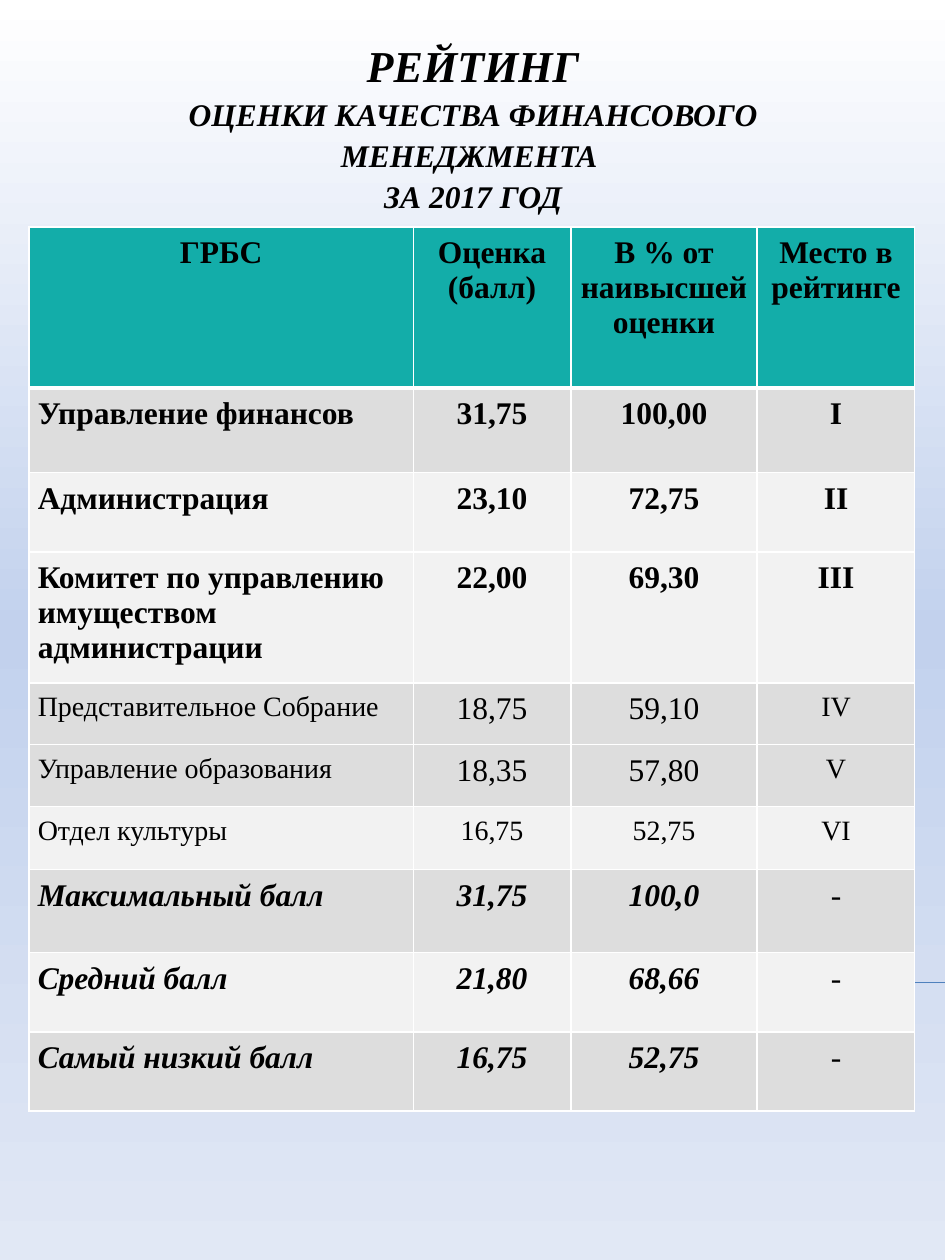
from lxml import etree
from pptx import Presentation
from pptx.dml.color import RGBColor
from pptx.enum.shapes import MSO_CONNECTOR
from pptx.enum.text import MSO_ANCHOR, PP_ALIGN
from pptx.oxml.ns import qn
from pptx.util import Inches, Pt

STRAIGHT = MSO_CONNECTOR.STRAIGHT
TOP = MSO_ANCHOR.TOP
LEFT, CENTER = PP_ALIGN.LEFT, PP_ALIGN.CENTER
FONT = "Times New Roman"
COLORS = {
    "text": "000000", "header": "13ADA9", "dark": "DDDDDD", "light": "F2F2F2",
    "border": "FFFFFF", "rule": "4F81BD",
    "sky": "FFFFFF", "middle": "C2D1ED", "ground": "E1E8F5",
}


def style(run, size, bold, italic):
    font = run.font
    font.name, font.size, font.bold, font.italic = FONT, Pt(size), bold, italic
    font.color.rgb = RGBColor.from_string(COLORS["text"])


def add_border(cell_properties, side, width):
    line = etree.SubElement(cell_properties, qn(f"a:{side}"), w=str(Pt(width)))
    fill = etree.SubElement(line, qn("a:solidFill"))
    etree.SubElement(fill, qn("a:srgbClr"), val=COLORS["border"])


prs = Presentation()
prs.slide_width, prs.slide_height = Inches(7.5), Inches(10)
W, H = prs.slide_width, prs.slide_height
slide = prs.slides.add_slide(prs.slide_layouts[6])

background = slide.background.fill
background.gradient()
background.gradient_angle = 270
stops = background._fill._gradFill.find(qn("a:gsLst"))
for stop in list(stops):
    stops.remove(stop)
for position, shade in ((0, "sky"), (50, "middle"), (100, "ground")):
    stop = etree.SubElement(stops, qn("a:gs"), pos=str(position * 1000))
    etree.SubElement(stop, qn("a:srgbClr"), val=COLORS[shade])

rule = slide.shapes.add_connector(STRAIGHT, int(W * 0.056), int(H * 0.78), W, int(H * 0.78))
rule.line.color.rgb = RGBColor.from_string(COLORS["rule"])
rule.line.width = Pt(0.75)
etree.SubElement(rule._element.spPr, qn("a:effectLst"))

heading = slide.shapes.add_textbox(Inches(0.35), Inches(0.21), Inches(6.81), Inches(1.56)).text_frame
heading.word_wrap = True
heading.vertical_anchor = TOP
heading.margin_left = heading.margin_right = Inches(0.15)
heading.margin_top = Inches(0.06)
title = heading.paragraphs[0]
title.text = "РЕЙТИНГ\vОЦЕНКИ КАЧЕСТВА ФИНАНСОВОГО МЕНЕДЖМЕНТА \vЗА 2017 ГОД"
title.alignment = CENTER
title.line_spacing = 1.09
for run, size in zip(title.runs, (25.2, 18, 18)):
    style(run, size, True, True)

BOLD = ((18, True, False),) * 4
PLAIN = ((16, False, False),) * 4
MIXED = (PLAIN[0], (18, False, False), (18, False, False), PLAIN[0])
SUMMARY = ((18, True, True),) * 3 + ((18, False, True),)
ratings = [
    (1.28, "header", BOLD, ("ГРБС", "Оценка (балл)", "В % от наивысшей оценки", "Место в рейтинге")),
    (0.67, "dark", BOLD, ("Управление финансов", "31,75", "100,00", "I")),
    (0.63, "light", BOLD, ("Администрация", "23,10", "72,75", "II")),
    (0.83, "light", BOLD, ("Комитет по управлению имуществом администрации", "22,00", "69,30", "III")),
    (0.49, "dark", MIXED, ("Представительное Собрание", "18,75", "59,10", "IV")),
    (0.49, "dark", MIXED, ("Управление образования", "18,35", "57,80", "V")),
    (0.5, "light", PLAIN, ("Отдел культуры", "16,75", "52,75", "VI")),
    (0.66, "dark", SUMMARY, ("Максимальный балл", "31,75", "100,0", "-")),
    (0.63, "light", SUMMARY, ("Средний балл", "21,80", "68,66", "-")),
    (0.63, "dark", SUMMARY, ("Самый низкий балл", "16,75", "52,75", "-")),
]
column_widths = (3.05, 1.25, 1.48, 1.25)
table = slide.shapes.add_table(
    len(ratings), len(column_widths), Inches(0.23), Inches(1.8),
    Inches(sum(column_widths)), Inches(sum(row[0] for row in ratings)),
).table
for column, width in zip(table.columns, column_widths):
    column.width = Inches(width)

for r, (height, shade, styles, values) in enumerate(ratings):
    table.rows[r].height = Inches(height)
    for c, value in enumerate(values):
        cell = table.cell(r, c)
        cell.margin_left = cell.margin_right = Inches(0.07)
        cell.margin_top = cell.margin_bottom = Inches(0.07)
        entry = cell.text_frame.paragraphs[0]
        entry.text = value
        entry.alignment = LEFT if c == 0 and r > 0 else CENTER
        style(entry.runs[0], *styles[c])
        properties = cell._tc.get_or_add_tcPr()
        for side, width in (("lnL", 1), ("lnR", 1), ("lnT", 3 if r == 1 else 1), ("lnB", 3 if r == 0 else 1)):
            add_border(properties, side, width)
        cell.fill.solid()
        cell.fill.fore_color.rgb = RGBColor.from_string(COLORS[shade])

prs.save("out.pptx")
